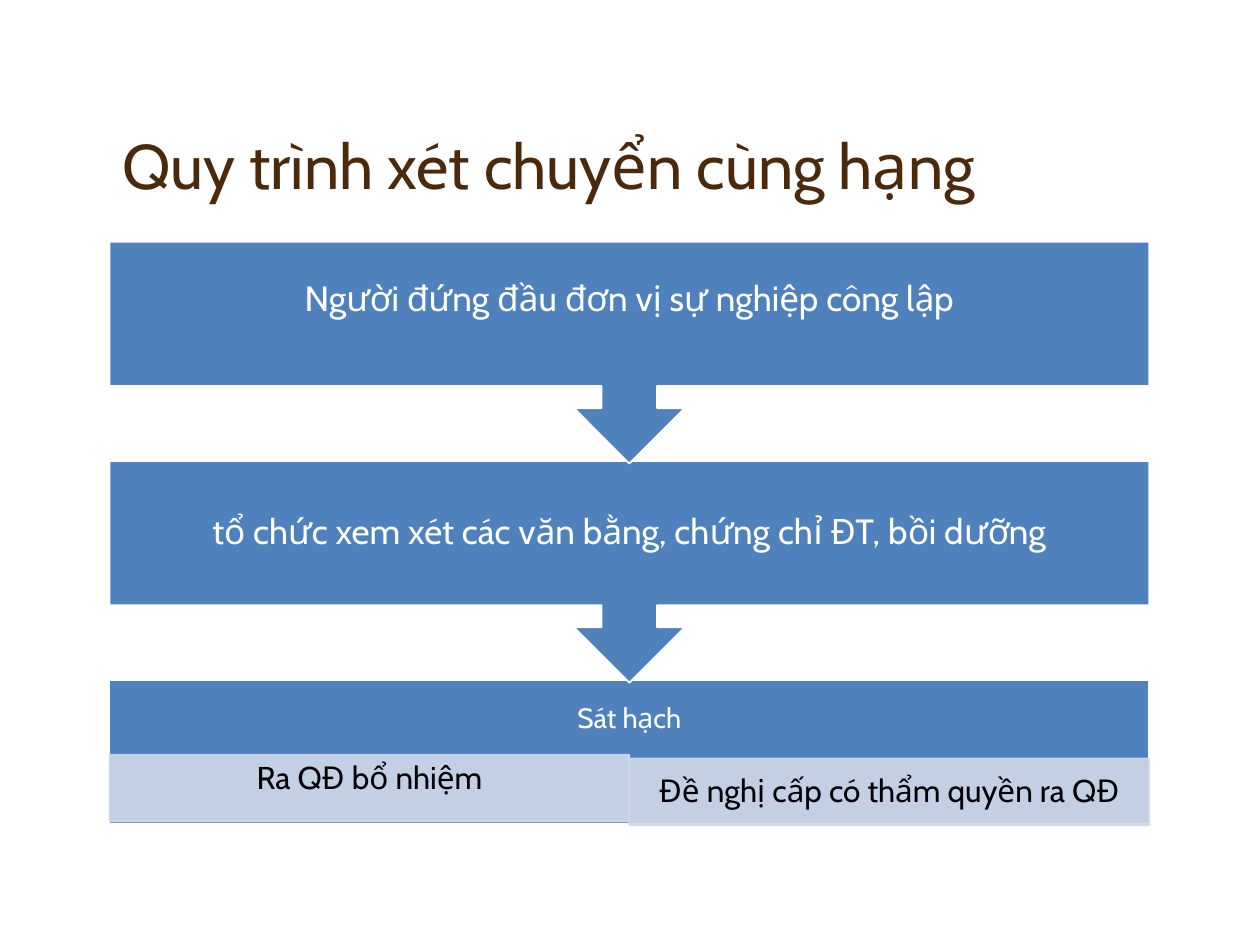
"""Build the slide on the process of transferring staff within the same grade."""
from dataclasses import dataclass

from lxml.etree import SubElement
from pptx import Presentation
from pptx.dml.color import RGBColor
from pptx.enum.shapes import MSO_SHAPE
from pptx.enum.text import MSO_ANCHOR, MSO_AUTO_SIZE, PP_ALIGN
from pptx.oxml.ns import qn
from pptx.util import Inches, Pt

COLORS = {
    "title": "4D290B",
    "step": "4F81BD",
    "outline": "FFFFFF",
    "step_text": "FFFFFF",
    "outcome": "D0D8E8",
    "outcome_text": "000000",
}
FONT = "Cabin"
SLIDE_WIDTH, SLIDE_HEIGHT = 10, 7.5
LEFT, WIDTH = 0.87, 8.25
COLUMN = WIDTH / 2
FIRST_ROW, ROW_PITCH = 1.92, 1.74
CALLOUT_HEIGHT, BOX_HEIGHT = 1.76, 1.14
OUTCOME_HEIGHT = 0.53


@dataclass(frozen=True)
class Panel:
    """A filled box with one centred line; lift is extra space below the text."""

    wording: str
    left: float
    top: float
    width: float
    height: float
    size: int
    role: str = "step"
    outline: str = "outline"
    preset: MSO_SHAPE = MSO_SHAPE.RECTANGLE
    margin: float = 0.12
    lift: float = 0
    opacity: int = 100


def row_top(row: int) -> float:
    """Return the top of a process row in inches."""
    return FIRST_ROW + row * ROW_PITCH


def step(row: int, wording: str, lift: float = 0) -> Panel:
    """Describe a step that points down to the next row."""
    return Panel(wording, LEFT, row_top(row), WIDTH, CALLOUT_HEIGHT, 20,
                 preset=MSO_SHAPE.DOWN_ARROW_CALLOUT, margin=0.16, lift=lift)


def outcome(column: int, top: float, wording: str, lift: float = 0) -> Panel:
    """Describe one of the two outcomes under the last step."""
    return Panel(wording, LEFT + column * COLUMN, top, COLUMN, OUTCOME_HEIGHT, 18,
                 role="outcome", outline="outcome", margin=0.03, lift=lift, opacity=90)


PANELS = [
    Panel("Sát hạch", LEFT, row_top(2), WIDTH, BOX_HEIGHT, 16, lift=0.52),
    outcome(0, 5.99, "Ra QĐ bổ nhiệm", lift=0.14),
    outcome(1, 6.02, "Đề nghị cấp có thẩm quyền ra QĐ"),
    step(1, "tổ chức xem xét các văn bằng, chứng chỉ ĐT, bồi dưỡng"),
    step(0, "Người đứng đầu đơn vị sự nghiệp công lập", lift=0.22),
]


def write(frame, wording: str, size: int, color: str, align: PP_ALIGN) -> None:
    """Write one formatted line into a text frame."""
    paragraph = frame.paragraphs[0]
    paragraph.alignment = align
    paragraph.line_spacing = 0.9
    run = paragraph.add_run()
    run.text = wording
    run.font.name = FONT
    run.font.size = Pt(size)
    run.font.color.rgb = RGBColor.from_string(COLORS[color])


def draw_title(slide, wording: str) -> None:
    """Place and fill the title placeholder."""
    title = slide.shapes.title
    title.left, title.top = Inches(LEFT), Inches(0.33)
    title.width, title.height = Inches(WIDTH), Inches(1.33)
    frame = title.text_frame
    frame.auto_size = MSO_AUTO_SIZE.NONE
    frame.vertical_anchor = MSO_ANCHOR.BOTTOM
    write(frame, wording, 36, "title", PP_ALIGN.LEFT)


def draw_panel(slide, panel: Panel) -> None:
    """Draw a panel with its text."""
    box = slide.shapes.add_shape(
        panel.preset, Inches(panel.left), Inches(panel.top),
        Inches(panel.width), Inches(panel.height))
    box.shadow.inherit = False
    box.fill.solid()
    box.fill.fore_color.rgb = RGBColor.from_string(COLORS[panel.role])
    box.line.color.rgb = RGBColor.from_string(COLORS[panel.outline])
    box.line.width = Pt(1)
    if panel.opacity < 100:
        for color in box.element.spPr.iter(qn("a:srgbClr")):
            SubElement(color, qn("a:alpha"), val=str(panel.opacity * 1000))
    frame = box.text_frame
    frame.word_wrap = True
    frame.vertical_anchor = MSO_ANCHOR.MIDDLE
    frame.margin_left = frame.margin_right = Inches(0.14)
    frame.margin_top = Inches(panel.margin)
    frame.margin_bottom = Inches(panel.margin + panel.lift)
    write(frame, panel.wording, panel.size, f"{panel.role}_text", PP_ALIGN.CENTER)


def main() -> None:
    """Build and save the presentation."""
    presentation = Presentation()
    presentation.slide_width = Inches(SLIDE_WIDTH)
    presentation.slide_height = Inches(SLIDE_HEIGHT)
    slide = presentation.slides.add_slide(presentation.slide_layouts[5])
    draw_title(slide, "Quy trình xét chuyển cùng hạng")
    for panel in PANELS:
        draw_panel(slide, panel)
    presentation.save("out.pptx")


if __name__ == "__main__":
    main()
